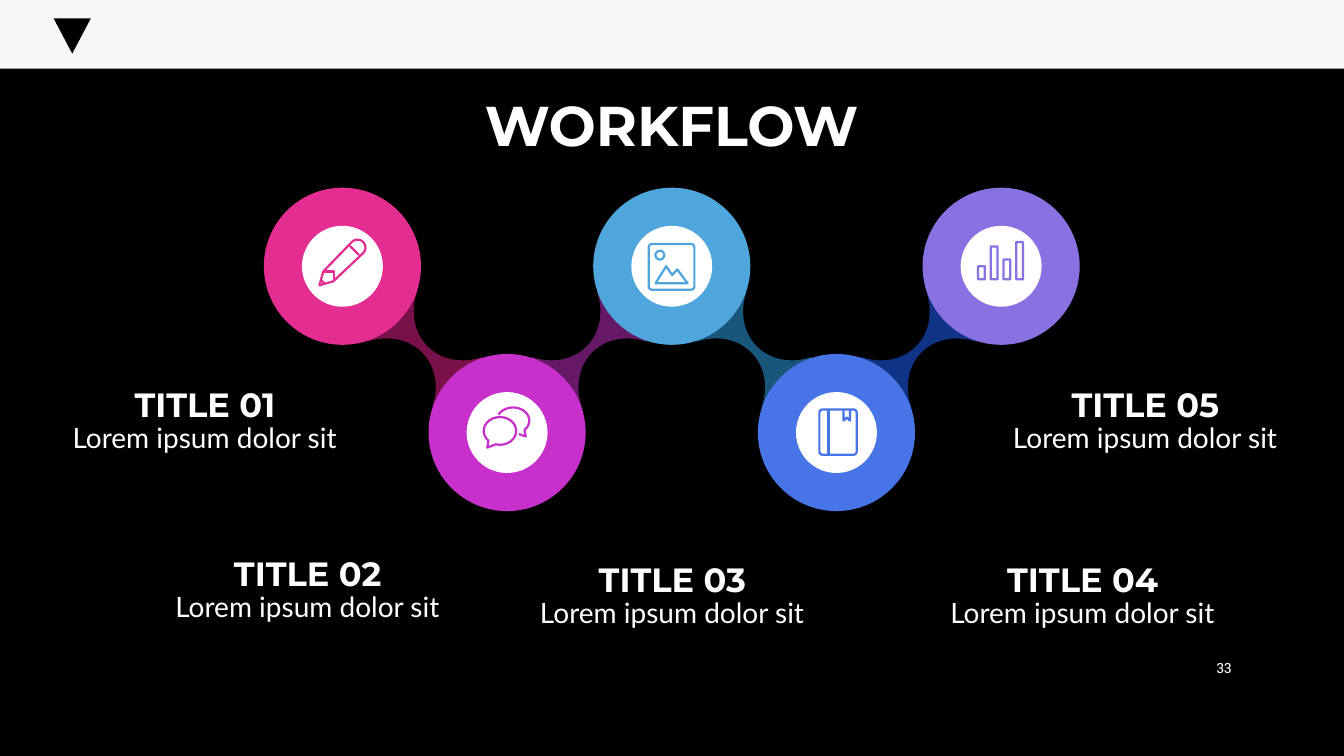
from math import cos, radians, sin

from pptx import Presentation
from pptx.dml.color import RGBColor
from pptx.enum.shapes import MSO_SHAPE as SHAPE
from pptx.enum.text import MSO_ANCHOR as ANCHOR, MSO_AUTO_SIZE as AUTO, PP_ALIGN as ALIGN
from pptx.util import Cm, Pt

BLACK = RGBColor(0x00, 0x00, 0x00)
WHITE = RGBColor(0xFF, 0xFF, 0xFF)
BAR = RGBColor(0xF7, 0xF7, 0xF7)
PINK = RGBColor(0xE3, 0x2D, 0x91)
MAGENTA = RGBColor(0xC8, 0x30, 0xCC)
SKY = RGBColor(0x4E, 0xA6, 0xDC)
BLUE = RGBColor(0x47, 0x75, 0xE7)
VIOLET = RGBColor(0x89, 0x71, 0xE1)
LINKS = [RGBColor(0x78, 0x10, 0x49), RGBColor(0x64, 0x18, 0x66),
         RGBColor(0x19, 0x56, 0x7C), RGBColor(0x11, 0x33, 0x86)]

HEADING = "WORKFLOW"
PAGE = "33"
CAPTIONS = [
    ("TITLE 01", "Lorem ipsum dolor sit", 5.16, 9.19),
    ("TITLE 02", "Lorem ipsum dolor sit", 7.75, 13.44),
    ("TITLE 03", "Lorem ipsum dolor sit", 16.94, 13.59),
    ("TITLE 04", "Lorem ipsum dolor sit", 27.28, 13.59),
    ("TITLE 05", "Lorem ipsum dolor sit", 28.86, 9.19),
]
FIRST_X, STEP_X = 8.63, 4.15
TOP_Y, STEP_Y = 6.71, 4.19
DISC, HOLE = 3.96, 2.04
BAR_TOPS = [0, -0.5, -0.17, -0.61]


def arc(cx, cy, rx, ry, start, end, steps=24):
    angles = [radians(start + (end - start) * i / steps) for i in range(steps + 1)]
    return [(cx + rx * cos(a), cy + ry * sin(a)) for a in angles]


def bezier(a, b, c, d, steps=20):
    points = []
    for i in range(steps + 1):
        t = i / steps
        weights = ((1 - t) ** 3, 3 * t * (1 - t) ** 2, 3 * t * t * (1 - t), t ** 3)
        points.append(tuple(sum(w * q[k] for w, q in zip(weights, (a, b, c, d)))
                            for k in (0, 1)))
    return points


def round_box(left, top, right, bottom, r):
    return (arc(left + r, top + r, r, r, 180, 270, 6)
            + arc(right - r, top + r, r, r, 270, 360, 6)
            + arc(right - r, bottom - r, r, r, 0, 90, 6)
            + arc(left + r, bottom - r, r, r, 90, 180, 6))


PENCIL = [
    ([(-0.58, 0.48), (-0.48, 0.13)] + arc(0.38, -0.47, 0.2, 0.2, 225, 405)
     + [(-0.23, 0.38)], True),
    ([(0.19, -0.51), (0.42, -0.28)], False),
    ([(-0.48, 0.13), (-0.22, 0.13), (-0.22, 0.37)], False),
    ([(-0.53, 0.36), (-0.45, 0.43)], False),
]
CHAT = [
    (arc(-0.18, -0.04, 0.41, 0.35, 135, 465) + [(-0.5, 0.38)], True),
    (arc(0.15, -0.3, 0.41, 0.33, 207, 405) + [(0.47, 0.1), (0.3, 0.04)], False),
]
PHOTO = [
    (round_box(-0.58, -0.56, 0.57, 0.59, 0.08), True),
    (arc(-0.3, -0.28, 0.11, 0.11, 0, 360), True),
    ([(-0.41, 0.43), (-0.14, 0), (0.01, 0.22), (0.14, 0.08), (0.4, 0.43)], True),
]
BOOK = [
    (round_box(-0.43, -0.58, 0.51, 0.56, 0.08), True),
    ([(-0.2, -0.58), (-0.2, 0.56)], False),
    ([(0.18, -0.58), (0.18, -0.3), (0.26, -0.38), (0.34, -0.3), (0.34, -0.58)], False),
]
BARS = [(round_box(-0.58 + 0.32 * i, top, -0.41 + 0.32 * i, 0.33, 0.01), True)
        for i, top in enumerate(BAR_TOPS)]
STAGES = [(PINK, PENCIL), (MAGENTA, CHAT), (SKY, PHOTO), (BLUE, BOOK), (VIOLET, BARS)]

LINK = (bezier((0.19, 1.46), (0.57, 0.34), (-0.34, -0.57), (-1.46, -0.19))
        + bezier((-0.19, -1.46), (-0.57, -0.34), (0.34, 0.57), (1.46, 0.19)))


def add_preset(s, kind, left, top, width, height, color):
    sp = s.shapes.add_shape(kind, Cm(left), Cm(top), Cm(width), Cm(height))
    sp.shadow.inherit = False
    sp.fill.solid()
    sp.fill.fore_color.rgb = color
    sp.line.fill.background()
    return sp


def add_disc(s, x, y, size, color):
    add_preset(s, SHAPE.OVAL, x - size / 2, y - size / 2, size, size, color)


def add_outline(s, x, y, contours):
    builder = None
    for points, closed in contours:
        placed = [(Cm(x + dx), Cm(y + dy)) for dx, dy in points]
        if builder is None:
            builder = s.shapes.build_freeform(*placed[0], scale=1.0)
        else:
            builder.move_to(*placed[0])
        builder.add_line_segments(placed[1:], close=closed)
    sp = builder.convert_to_shape()
    sp.shadow.inherit = False
    return sp


def write(sp, text, font, size, bold=False, align=ALIGN.CENTER, spacing=None):
    tf = sp.text_frame
    tf.word_wrap = True
    tf.auto_size = AUTO.NONE
    tf.vertical_anchor = ANCHOR.MIDDLE
    p = tf.paragraphs[0]
    p.alignment = align
    if spacing:
        p.line_spacing = spacing
    r = p.add_run()
    r.text = text
    r.font.name = font
    r.font.size = Pt(size)
    r.font.bold = bold
    r.font.color.rgb = WHITE


def add_text(s, left, top, width, height, *args, **style):
    sp = s.shapes.add_textbox(Cm(left), Cm(top), Cm(width), Cm(height))
    write(sp, *args, **style)


def main():
    prs = Presentation()
    prs.slide_width, prs.slide_height = Cm(33.87), Cm(19.05)
    s = prs.slides.add_slide(prs.slide_layouts[5])
    s.background.fill.solid()
    s.background.fill.fore_color.rgb = BLACK

    add_preset(s, SHAPE.RECTANGLE, 0, 0, 33.87, 1.73, BAR)
    mark = add_preset(s, SHAPE.ISOSCELES_TRIANGLE, 1.35, 0.46, 0.94, 0.89, BLACK)
    mark.rotation = 180

    title = s.shapes.title
    title.left, title.top, title.width, title.height = Cm(9.8), Cm(2.57), Cm(14.25), Cm(1.12)
    write(title, HEADING, "Montserrat", 40, bold=True)

    centers = [(FIRST_X + STEP_X * i, TOP_Y + STEP_Y * (i % 2)) for i in range(len(STAGES))]
    for i, color in enumerate(LINKS):
        side = -1 if i % 2 else 1
        sp = add_outline(s, centers[i][0] + STEP_X / 2, TOP_Y + STEP_Y / 2,
                         [([(side * dx, dy) for dx, dy in LINK], True)])
        sp.fill.solid()
        sp.fill.fore_color.rgb = color
        sp.line.fill.background()

    for (x, y), (color, icon) in zip(centers, STAGES):
        add_disc(s, x, y, DISC, color)
        add_disc(s, x, y, HOLE, WHITE)
        sp = add_outline(s, x, y, icon)
        sp.fill.background()
        sp.line.color.rgb = color
        sp.line.width = Pt(1.6)

    for name, detail, x, top in CAPTIONS:
        add_text(s, x - 3.95, top + 0.97, 7.9, 1.73, detail, "Lato", 20)
        add_text(s, x - 4.01, top, 8.03, 1.5, name, "Montserrat", 24, bold=True, spacing=1.5)

    add_text(s, 29.21, 16.33, 2.08, 1.02, PAGE, "Roboto Slab", 10, align=ALIGN.RIGHT)
    prs.save("out.pptx")


if __name__ == "__main__":
    main()
